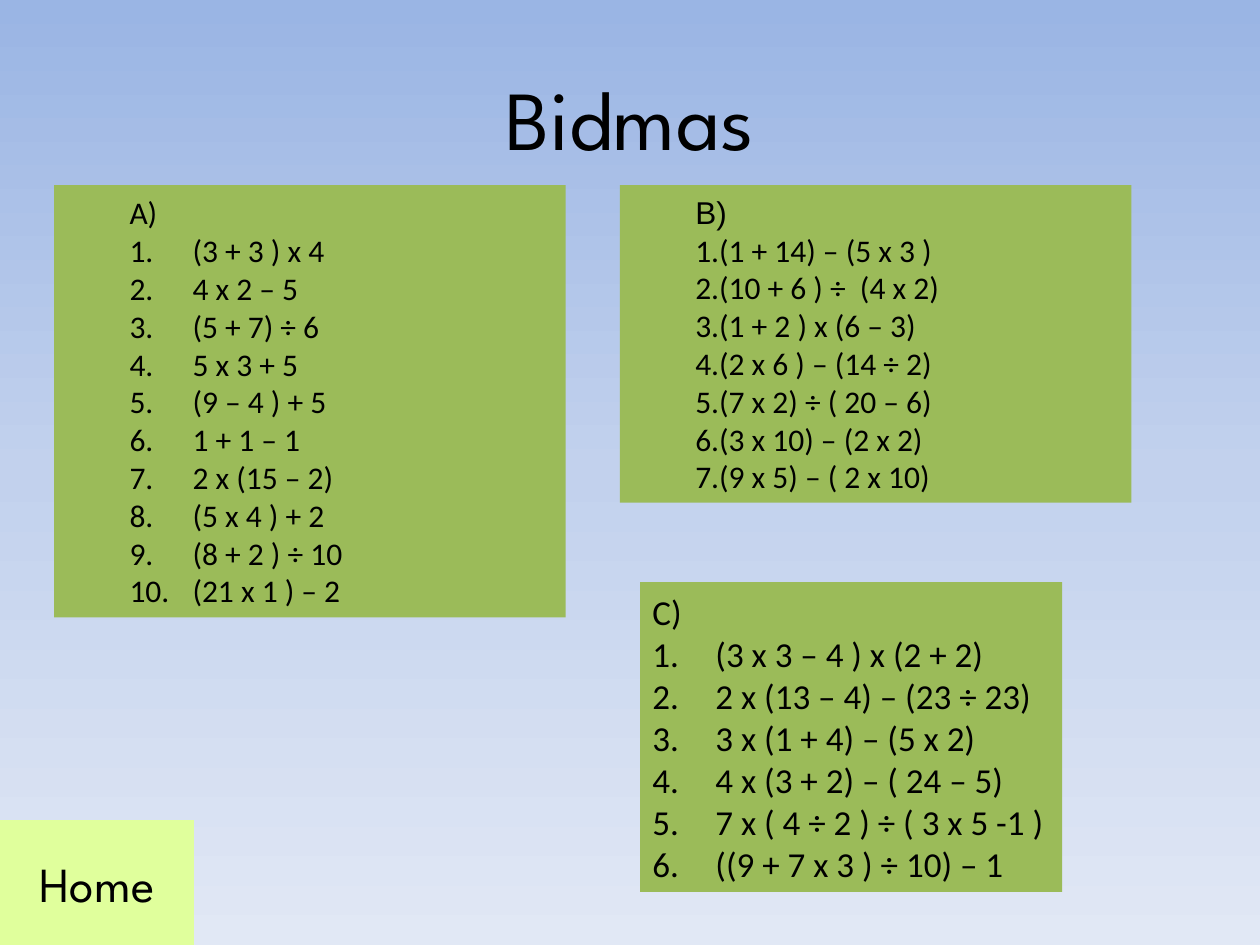
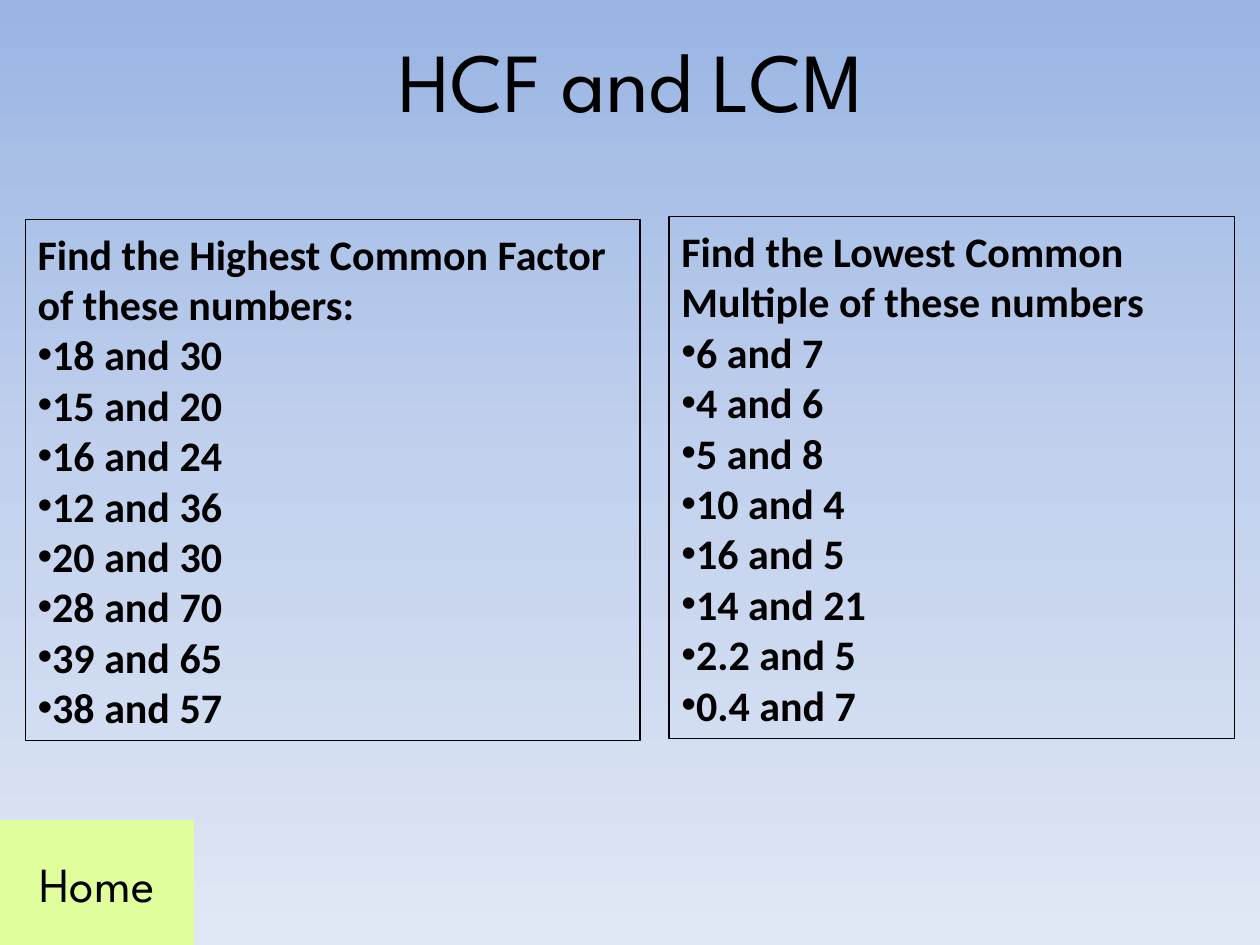
import copy
from dataclasses import dataclass

import pptx
import pptx.dml.color
import pptx.enum.shapes
import pptx.enum.text
import pptx.oxml
import pptx.oxml.ns
import pptx.util

PX = 9144
ALIGN = pptx.enum.text.PP_ALIGN
MIDDLE = pptx.enum.text.MSO_ANCHOR.MIDDLE
BULLET = ("•", "Arial", "buChar", {"char": "•"})
NUMBER = ("1.", "+mj-lt", "buAutoNum", {"type": "arabicPeriod"})


@dataclass(frozen=True)
class Theme:
    sky: tuple = ((0, "9AB5E4"), (0.5, "C2D1ED"), (1, "E1E8F5"))
    ink: str = "000000"
    panel: str = "9BBB59"
    home: str = "E0FF9C"
    display_font: str = "League Spartan"
    body_font: str = "Calibri"
    heading_alt_font: str = "Arial"
    title_size: int = 48
    home_size: int = 28
    question_size: int = 24
    large_sum_size: int = 20
    sum_size: int = 18


THEME = Theme()


def rgb(value):
    return pptx.dml.color.RGBColor.from_string(value)


def write(paragraph, text, *, size, font=THEME.body_font, color=THEME.ink,
          bold=False, align=ALIGN.LEFT, level=0, margin=0, indent=0, marker=None):
    paragraph.alignment = align
    paragraph.level = level
    properties = paragraph._p.get_or_add_pPr()
    properties.set("marL", str(margin * PX))
    properties.set("indent", str(indent * PX))
    if marker:
        _, typeface, tag, attributes = marker
        for name, values in (("buFont", {"typeface": typeface}), (tag, attributes)):
            element = pptx.oxml.parse_xml(
                f'<a:{name} {pptx.oxml.ns.nsdecls("a")}/>')
            for key, value in values.items():
                element.set(key, value)
            properties.append(element)
    run = paragraph.add_run()
    run.text = text
    run.font.size = pptx.util.Pt(size)
    run.font.name = font
    run.font.bold = bold
    run.font.color.rgb = rgb(color)


class Deck:
    def __init__(self, theme):
        self.theme = theme
        self.presentation = pptx.Presentation()
        self.presentation.slide_width = 1000 * PX
        self.presentation.slide_height = 750 * PX
        self.slide = None
        self.paint_sky()

    def paint_sky(self):
        master = self.presentation.slide_master
        fill = master.background.fill
        fill.gradient()
        fill.gradient_angle = 270
        stops = master.element.find(".//" + pptx.oxml.ns.qn("a:gsLst"))
        stops.insert(1, copy.deepcopy(stops[0]))
        for stop, (position, color) in zip(fill.gradient_stops, self.theme.sky):
            stop.position = position
            stop.color.rgb = rgb(color)

    def page(self, title, left, top):
        layout = self.presentation.slide_layouts[5]
        self.slide = self.presentation.slides.add_slide(layout)
        heading = self.slide.shapes.title
        heading.left, heading.top = left * PX, top * PX
        heading.width, heading.height = 900 * PX, 125 * PX
        heading.text_frame.vertical_anchor = MIDDLE
        write(heading.text_frame.paragraphs[0], title, size=self.theme.title_size,
              font=self.theme.display_font, align=ALIGN.CENTER)
        self.home()

    def box(self, left, top, width, height, fill=None, outline=None):
        box = self.slide.shapes.add_shape(
            pptx.enum.shapes.MSO_SHAPE.RECTANGLE,
            left * PX, top * PX, width * PX, height * PX)
        box.shadow.inherit = False
        if fill:
            box.fill.solid()
            box.fill.fore_color.rgb = rgb(fill)
        else:
            box.fill.background()
        if outline:
            box.line.color.rgb = rgb(outline)
            box.line.width = pptx.util.Pt(0.75)
        else:
            box.line.fill.background()
        box.text_frame.word_wrap = True
        box.text_frame.vertical_anchor = MIDDLE
        return box.text_frame

    def home(self):
        frame = self.box(0, 651, 154, 99, fill=self.theme.home)
        write(frame.paragraphs[0], "Home", size=self.theme.home_size,
              font=self.theme.display_font, align=ALIGN.CENTER)

    def exercise(self, place, heading, questions, marker, *, fill=None,
                 outline=None, heading_font=None, **style):
        frame = self.box(*place, fill=fill, outline=outline)
        frame.auto_size = pptx.enum.text.MSO_AUTO_SIZE.SHAPE_TO_FIT_TEXT
        write(frame.paragraphs[0], heading,
              font=heading_font or self.theme.body_font, **style)
        for question in questions:
            write(frame.add_paragraph(), question, marker=marker, **style)


def bidmas(deck):
    theme = deck.theme
    deck.page("Bidmas", 50, 30)
    deck.exercise(
        (43, 147, 406, 343), "A)",
        ["(3 + 3 ) x 4", "4 x 2 – 5", "(5 + 7) ÷ 6", "5 x 3 + 5",
         "(9 – 4 ) + 5", "1 + 1 – 1", "2 x (15 – 2)", "(5 x 4 ) + 2",
         "(8 + 2 ) ÷ 10", "(21 x 1 ) – 2"],
        NUMBER, fill=theme.panel, size=theme.sum_size,
        level=1, margin=100, indent=-50)
    deck.exercise(
        (492, 147, 406, 252), "B)",
        ["(1 + 14) – (5 x 3 )", "(10 + 6 ) ÷  (4 x 2)", "(1 + 2 ) x (6 – 3)",
         "(2 x 6 ) – (14 ÷ 2)", "(7 x 2) ÷ ( 20 – 6)", "(3 x 10) – (2 x 2)",
         "(9 x 5) – ( 2 x 10)"],
        NUMBER, fill=theme.panel, size=theme.sum_size,
        heading_font=theme.heading_alt_font, level=1, margin=50)
    deck.exercise(
        (508, 462, 335, 246), "C)",
        ["(3 x 3 – 4 ) x (2 + 2)", "2 x (13 – 4) – (23 ÷ 23)",
         "3 x (1 + 4) – (5 x 2)", "4 x (3 + 2) – ( 24 – 5)",
         "7 x ( 4 ÷ 2 ) ÷ ( 3 x 5 -1 )", "((9 + 7 x 3 ) ÷ 10) – 1"],
        NUMBER, fill=theme.panel, size=theme.large_sum_size,
        align=ALIGN.JUSTIFY, margin=50, indent=-50)


def hcf_and_lcm(deck):
    deck.page("HCF and LCM", 51, 0)
    factor_pairs = [(18, 30), (15, 20), (16, 24), (12, 36),
                    (20, 30), (28, 70), (39, 65), (38, 57)]
    multiple_pairs = [(6, 7), (4, 6), (5, 8), (10, 4),
                      (16, 5), (14, 21), (2.2, 5), (0.4, 7)]
    for place, heading, pairs in (
        ((20, 174, 488, 414),
         "Find the Highest Common Factor of these numbers:", factor_pairs),
        ((531, 172, 449, 414),
         "Find the Lowest Common Multiple of these numbers", multiple_pairs),
    ):
        deck.exercise(place, heading, [f"{a} and {b}" for a, b in pairs], BULLET,
                      outline=deck.theme.ink, size=deck.theme.question_size,
                      bold=True)


def main():
    deck = Deck(THEME)
    bidmas(deck)
    hcf_and_lcm(deck)
    deck.presentation.save("out.pptx")


if __name__ == "__main__":
    main()
